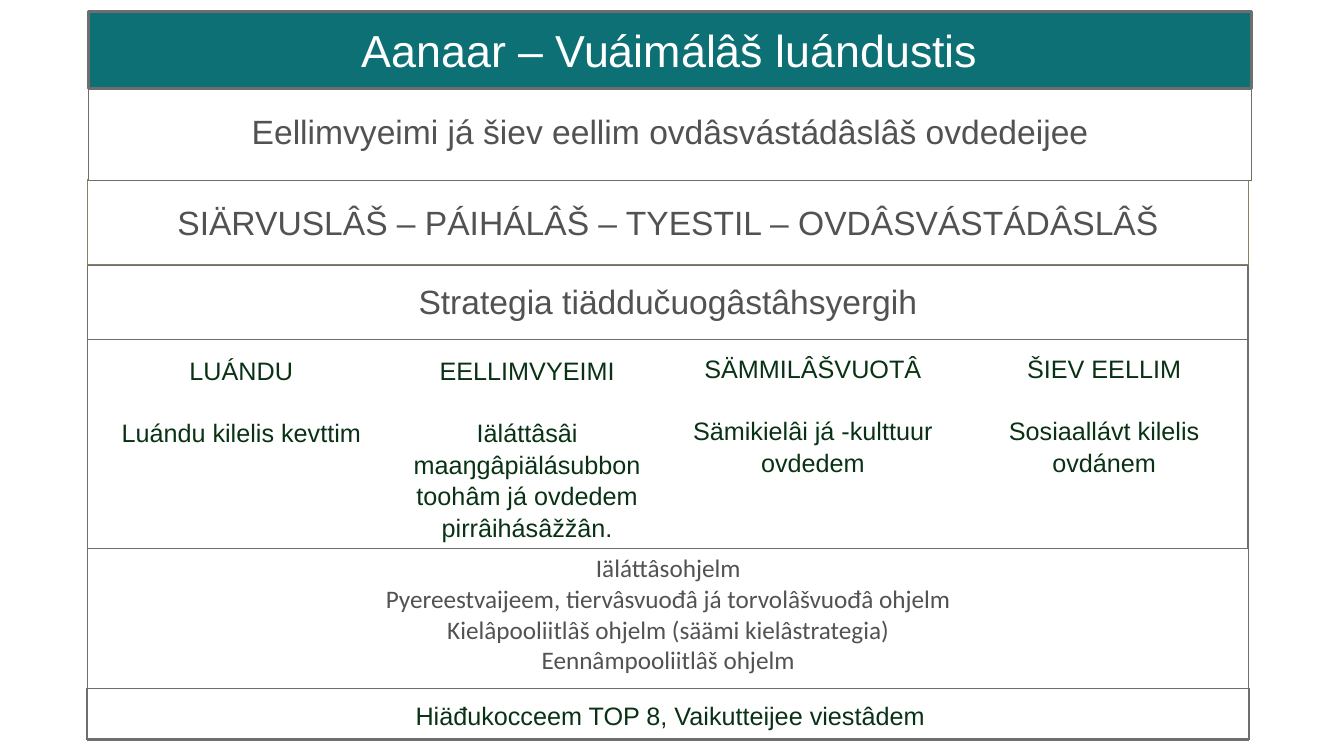
from lxml.etree import SubElement
from pptx import Presentation
from pptx.dml.color import RGBColor
from pptx.enum.shapes import MSO_SHAPE
from pptx.enum.text import MSO_ANCHOR, MSO_AUTO_SIZE, PP_ALIGN
from pptx.oxml.ns import qn
from pptx.util import Cm, Pt

COLORS = {
    "teal": "0D7075",
    "white": "FFFFFF",
    "text": "525252",
    "green": "083213",
    "border": "6E6E6E",
    "olive": "8B8160",
}


def rgb(name):
    return RGBColor.from_string(COLORS[name])


def write(tf, text, size, color, font="Arial", anchor=MSO_ANCHOR.MIDDLE):
    """Fill a text frame with centred paragraphs, one per line of text."""
    tf.text = text
    tf.word_wrap = True
    tf.vertical_anchor = anchor
    for p in tf.paragraphs:
        p.alignment = PP_ALIGN.CENTER
        for r in p.runs:
            r.font.size = Pt(size)
            r.font.name = font
            r.font.color.rgb = rgb(color)


prs = Presentation()
prs.slide_width, prs.slide_height = Cm(33.87), Cm(19.05)
s = prs.slides.add_slide(prs.slide_layouts[5])

# Values band, strategy columns and vision band: white boxes
values = "SIÄRVUSLÂŠ – PÁIHÁLÂŠ – TYESTIL – OVDÂSVÁSTÁDÂSLÂŠ"
vision = "Eellimvyeimi já šiev eellim ovdâsvástádâslâš ovdedeijee"
columns = [
    (2.36, 8.79, 7.44, "LUÁNDU\nLuándu kilelis kevttim"),
    (9.73, 8.79, 7.11, "EELLIMVYEIMI\nIäláttâsâi maaŋgâpiälásubbon toohâm já ovdedem pirrâihásâžžân."),
    (16.84, 8.74, 7.29, "SÄMMILÂŠVUOTÂ\nSämikielâi já -kulttuur ovdedem"),
    (24.13, 8.74, 7.39, "ŠIEV EELLIM\nSosiaallávt kilelis ovdánem"),
]
columns_bottom = 14.07
boxes = [(2.21, 4.52, 29.26, 2.16, values, "olive", 1)]
boxes += [(x, y, w, columns_bottom - y, text, None, 0) for x, y, w, text in columns]
boxes += [(2.24, 2.08, 29.29, 2.46, vision, "border", 0.5)]

for x, y, w, h, text, line, width in boxes:
    box = s.shapes.add_shape(MSO_SHAPE.RECTANGLE, Cm(x), Cm(y), Cm(w), Cm(h))
    box.shadow.inherit = False
    box.fill.solid()
    box.fill.fore_color.rgb = rgb("white")
    tf = box.text_frame
    if line:
        box.line.color.rgb = rgb(line)
        box.line.width = Pt(width)
        write(tf, text, 24, "text")
    else:
        box.line.fill.background()
        write(tf, text, 18, "green", anchor=MSO_ANCHOR.TOP)
        for p in tf.paragraphs:
            p.line_spacing = 1.05
        tf.paragraphs[1].space_before = Pt(21.5)

footer = s.shapes.add_textbox(Cm(2.26), Cm(17.15), Cm(29.26), Cm(1.78))
write(footer.text_frame, "Hiäđukocceem TOP 8, Vaikutteijee viestâdem", 18, "green")

# Title band lies over the top edge of the vision band
title = s.shapes.title
title.left, title.top, title.width, title.height = Cm(2.24), Cm(0.28), Cm(29.29), Cm(1.96)
title.fill.solid()
title.fill.fore_color.rgb = rgb("teal")
title.line.color.rgb = rgb("border")
title.line.width = Pt(2)
write(title.text_frame, "Aanaar – Vuáimálâš luándustis", 32, "white")
title.text_frame.auto_size = MSO_AUTO_SIZE.NONE
title.element.getparent().append(title.element)

# Bordered tables: left, top, width, row heights
frames = []
for x, y, w, heights in [
    (2.21, 13.82, 29.26, [4.85]),
    (2.18, 17.35, 29.31, [1.27]),
    (2.21, 6.68, 29.24, [1.88, 5.26]),
]:
    table = s.shapes.add_table(len(heights), 1, Cm(x), Cm(y), Cm(w), Cm(sum(heights))).table
    table.first_row = table.horz_banding = False
    for row, h in zip(table.rows, heights):
        row.height = Cm(h)
        cell = row.cells[0]
        tcPr = cell._tc.get_or_add_tcPr()
        for side in ("a:lnL", "a:lnR", "a:lnT", "a:lnB"):
            ln = SubElement(tcPr, qn(side), w=str(Pt(1)))
            fill = SubElement(ln, qn("a:solidFill"))
            SubElement(fill, qn("a:srgbClr"), val=COLORS["border"])
        cell.fill.background()
    frames.append(table)

programmes, _, strategy = frames
cell = programmes.cell(0, 0)
write(
    cell.text_frame,
    "Iäláttâsohjelm\n"
    "Pyereestvaijeem, tiervâsvuođâ já torvolâšvuođâ ohjelm\n"
    "Kielâpooliitlâš ohjelm (säämi kielâstrategia)\n"
    "Eennâmpooliitlâš ohjelm",
    18, "text", "Calibri", MSO_ANCHOR.TOP,
)
cell = strategy.cell(0, 0)
write(cell.text_frame, "Strategia tiäddučuogâstâhsyergih", 24, "text")
cell.vertical_anchor = MSO_ANCHOR.MIDDLE

prs.save("out.pptx")
